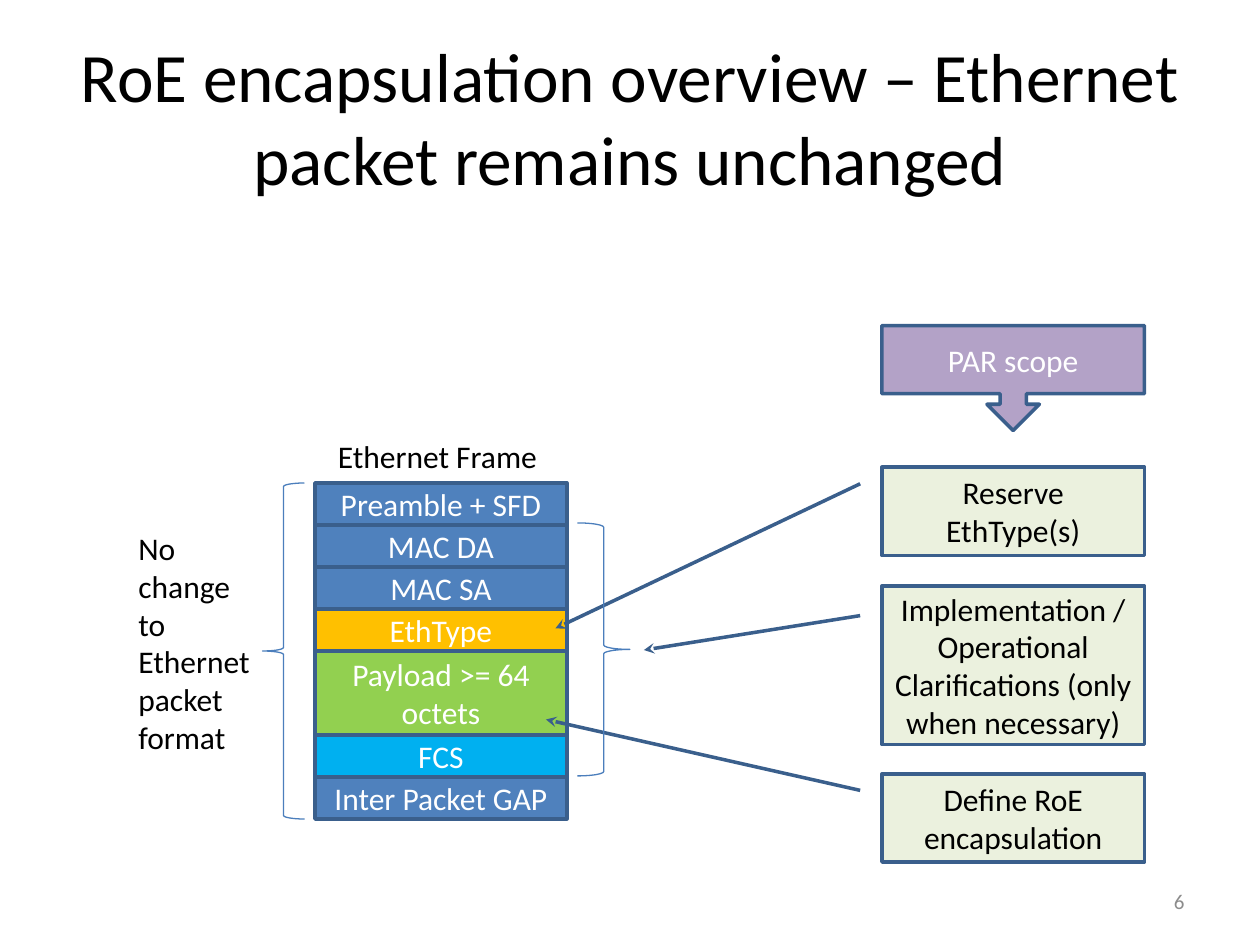
from dataclasses import dataclass
from typing import Optional

from lxml import etree
from pptx import Presentation
from pptx import util as u
from pptx.dml.color import RGBColor
from pptx.enum import shapes, text
from pptx.oxml.ns import qn

COLS, ROWS = 120, 90
FONT = "Calibri"
BLACK = RGBColor(0, 0, 0)
WHITE = RGBColor(255, 255, 255)
GREY = RGBColor(0x8C, 0x8C, 0x8C)
BLUE = RGBColor(0x4F, 0x81, 0xBD)
ORANGE = RGBColor(0xFF, 0xC0, 0x00)
GREEN = RGBColor(0x92, 0xD0, 0x50)
CYAN = RGBColor(0x00, 0xB0, 0xF0)
PALE = RGBColor(0xEB, 0xF1, 0xDE)
PURPLE = RGBColor(0xB3, 0xA2, 0xC7)
EDGE = RGBColor(0x3A, 0x5F, 0x8C)
BRACE = RGBColor(0x4B, 0x7E, 0xBC)

SHAPE = shapes.MSO_SHAPE
ALIGN = text.PP_ALIGN
ANCHOR = text.MSO_ANCHOR

prs = Presentation()
prs.slide_width, prs.slide_height = u.Inches(10), u.Inches(7.5)
s = prs.slides.add_slide(prs.slide_layouts[5])


@dataclass
class Area:
    col: float
    row: float
    cols: float
    rows: float

    def emu(self) -> tuple:
        dx, dy = prs.slide_width / COLS, prs.slide_height / ROWS
        return (u.Emu(round(self.col * dx)), u.Emu(round(self.row * dy)),
                u.Emu(round(self.cols * dx)), u.Emu(round(self.rows * dy)))


@dataclass
class Field:
    label: str
    fill: RGBColor = BLUE
    rows: int = 4


@dataclass
class Callout:
    label: str
    row: float
    rows: float
    tip_y: float
    tip_x: float


def write(sp, label: str, color: RGBColor = BLACK, size: float = 18,
          align=ALIGN.CENTER, anchor=ANCHOR.MIDDLE, wrap: bool = True) -> None:
    tf = sp.text_frame
    tf.text = label
    tf.word_wrap = wrap
    tf.vertical_anchor = anchor
    for p in tf.paragraphs:
        p.alignment = align
        for r in p.runs:
            r.font.name, r.font.size = FONT, u.Pt(size)
            r.font.color.rgb = color


def add_shape(kind, area: Area, fill: Optional[RGBColor] = None,
              line: RGBColor = EDGE, width: float = 2):
    sp = s.shapes.add_shape(kind, *area.emu())
    sp.shadow.inherit = False
    if fill is None:
        sp.fill.background()
    else:
        sp.fill.solid()
        sp.fill.fore_color.rgb = fill
    sp.line.color.rgb = line
    sp.line.width = u.Pt(width)
    return sp


def add_callout(c: Callout) -> None:
    sp = add_shape(SHAPE.LINE_CALLOUT_1, Area(84, c.row, 25, c.rows), PALE)
    for i, value in enumerate((0.188, -0.083, c.tip_y, c.tip_x)):
        sp.adjustments[i] = value
    ln = sp.line._get_or_add_ln()
    etree.SubElement(ln, qn("a:tailEnd")).set("type", "stealth")
    write(sp, c.label)


def add_text(area: Area, label: str, **style) -> None:
    write(s.shapes.add_textbox(*area.emu()), label, **style)


def add_brace(kind, area: Area) -> None:
    add_shape(kind, area, line=BRACE, width=0.75)


FIELDS = [
    Field("Preamble + SFD"),
    Field("MAC DA"),
    Field("MAC SA"),
    Field("EthType", ORANGE),
    Field("Payload >= 64\noctets", GREEN, 8),
    Field("FCS", CYAN),
    Field("Inter Packet GAP"),
]
CALLOUTS = [
    Callout("Reserve EthType(s)", 44.5, 8.4, 1.828, -1.244),
    Callout("Define RoE encapsulation", 73.7, 8.4, -0.616, -1.28),
    Callout("Implementation / Operational\nClarifications (only when necessary)",
            55.8, 15.1, 0.405, -0.907),
]

title = s.shapes.title
title.left, title.top, title.width, title.height = Area(6, 3.6, 108, 15).emu()
write(title, "RoE encapsulation overview – Ethernet packet remains unchanged", size=39.6)
title.text_frame.auto_size = text.MSO_AUTO_SIZE.NONE

row = 46
for field in FIELDS:
    write(add_shape(SHAPE.RECTANGLE, Area(30, row, 24, field.rows), field.fill),
          field.label, WHITE)
    row += field.rows

add_text(Area(12, 49.8, 13.2, 23), "No\nchange\nto\nEthernet\npacket\nformat",
         align=ALIGN.LEFT, anchor=ANCHOR.TOP, wrap=False)

for callout in CALLOUTS:
    add_callout(callout)

add_brace(SHAPE.LEFT_BRACE, Area(25, 46, 4, 32))
write(add_shape(SHAPE.DOWN_ARROW_CALLOUT, Area(84, 31, 25, 10), PURPLE), "PAR scope", WHITE)
add_brace(SHAPE.RIGHT_BRACE, Area(55, 49.8, 5, 24.1))
add_text(Area(31, 41, 21.6, 4.8), "Ethernet Frame",
         align=ALIGN.LEFT, anchor=ANCHOR.TOP, wrap=False)
add_text(Area(86, 83.4, 28, 4.8), "6", color=GREY, size=12, align=ALIGN.RIGHT)

prs.save("out.pptx")
